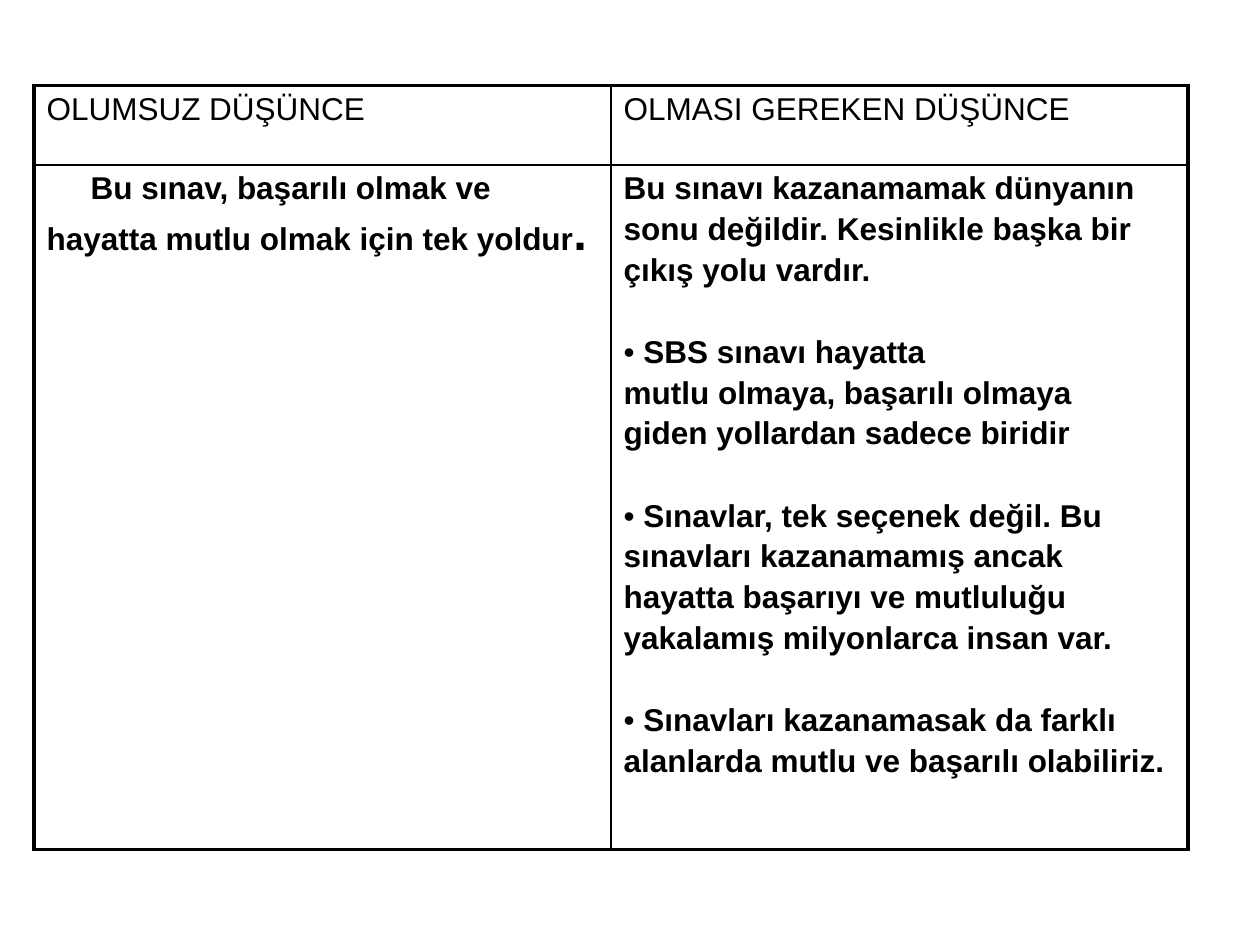
from lxml import etree
from pptx import Presentation
from pptx import util as u
from pptx.dml.color import RGBColor
from pptx.oxml.ns import qn

COLORS = {"ink": "000000"}
FONT, BODY_SIZE, LARGE_SIZE = "Arial", 18, 28
THIN, THICK = u.Pt(1), u.Pt(2.25)
LINE_GAP, GROUP_GAP = u.Pt(3.1), u.Pt(26.9)

headings = ["OLUMSUZ DÜŞÜNCE", "OLMASI GEREKEN DÜŞÜNCE"]
negative_thought = "Bu sınav, başarılı olmak ve hayatta mutlu olmak için tek yoldur"
better_thoughts = [
    ["Bu sınavı kazanamamak dünyanın", "sonu değildir. Kesinlikle başka bir",
     "çıkış yolu vardır."],
    ["• SBS sınavı hayatta", "mutlu olmaya, başarılı olmaya",
     "giden yollardan sadece biridir"],
    ["• Sınavlar, tek seçenek değil. Bu", "sınavları kazanamamış ancak",
     "hayatta başarıyı ve mutluluğu", "yakalamış milyonlarca insan var."],
    ["• Sınavları kazanamasak da farklı", "alanlarda mutlu ve başarılı olabiliriz."],
]


def add_run(paragraph, wording, bold=False, size=BODY_SIZE):
    run = paragraph.add_run()
    run.text = wording
    run.font.name, run.font.size, run.font.bold = FONT, u.Pt(size), bold
    run.font.color.rgb = RGBColor.from_string(COLORS["ink"])


def draw_border(cell, side, width):
    """Draw one side (L, R, T or B) of a cell; call in that order, before the fill."""
    line = etree.SubElement(cell._tc.get_or_add_tcPr(), qn(f"a:ln{side}"), w=str(width))
    fill = etree.SubElement(line, qn("a:solidFill"))
    etree.SubElement(fill, qn("a:srgbClr"), val=COLORS["ink"])


prs = Presentation()
prs.slide_width, prs.slide_height = u.Inches(10), u.Inches(7.5)
slide = prs.slides.add_slide(prs.slide_layouts[6])

column_width = u.Inches(4.58)
row_heights = [u.Inches(0.63), u.Inches(5.43)]
thoughts = slide.shapes.add_table(
    2, 2, u.Inches(0.27), u.Inches(0.68), 2 * column_width, sum(row_heights)).table
thoughts.first_row = thoughts.horz_banding = False
for column in thoughts.columns:
    column.width = column_width
for row, height in zip(thoughts.rows, row_heights):
    row.height = height

# Thick frame outside, thin rules inside
for r in range(2):
    for c in range(2):
        cell = thoughts.cell(r, c)
        outer_sides = {"L": c == 0, "R": c == 1, "T": r == 0, "B": r == 1}
        for side, is_outer in outer_sides.items():
            draw_border(cell, side, THICK if is_outer else THIN)
        cell.fill.background()

for c, heading in enumerate(headings):
    add_run(thoughts.cell(0, c).text_frame.paragraphs[0], heading)

negative = thoughts.cell(1, 0).text_frame.paragraphs[0]
negative._p.get_or_add_pPr().set("indent", str(u.Inches(0.35)))
add_run(negative, negative_thought, bold=True)
add_run(negative, ".", bold=True, size=LARGE_SIZE)

better_frame = thoughts.cell(1, 1).text_frame
for g, group in enumerate(better_thoughts):
    for n, line in enumerate(group):
        if g == n == 0:
            paragraph = better_frame.paragraphs[0]
        else:
            paragraph = better_frame.add_paragraph()
            paragraph.space_before = LINE_GAP if n else GROUP_GAP
        if line.startswith("• "):
            add_run(paragraph, "• ")
        add_run(paragraph, line.removeprefix("• "), bold=True)

prs.save("out.pptx")
